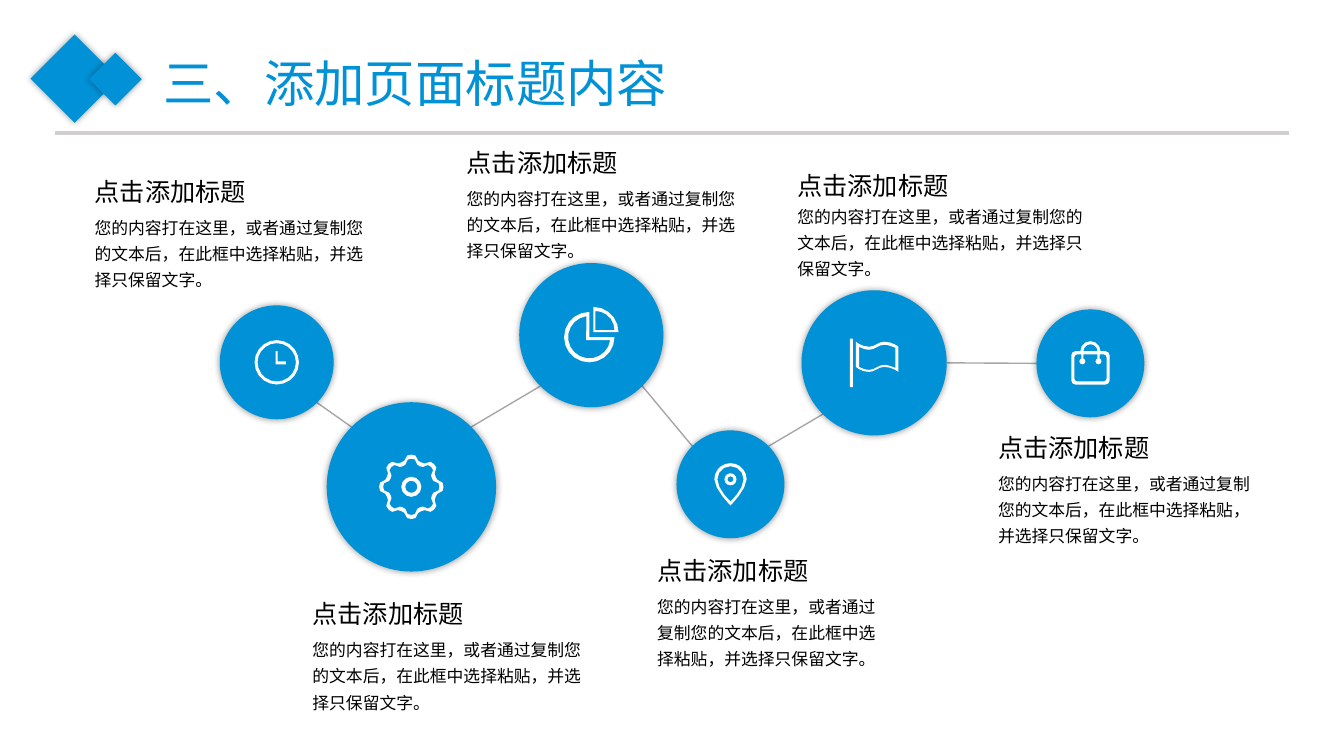
"""Build a slide with six linked icon circles and their captions."""
from dataclasses import dataclass
from math import cos, pi, radians, sin, tanh
from typing import Any

from lxml.etree import SubElement as Sub
from pptx import Presentation as Deck
from pptx.dml.color import RGBColor as Rgb
from pptx.enum.shapes import MSO_CONNECTOR as Link, MSO_SHAPE as Form
from pptx.enum.text import MSO_AUTO_SIZE as Fit
from pptx.oxml.ns import qn
from pptx.util import Inches, Pt

Point = tuple[float, float]
Path = list[Point]

BLUE, WHITE, BLACK = "0091D6", "FFFFFF", "000000"
FACE = "Noto Sans CJK SC"
HEAD = "点击添加标题"
BODY = "您的内容打在这里，或者通过复制您的文本后，在此框中选择粘贴，并选择只保留文字。"
TITLE_FMT = {"name": FACE, "size": Pt(36)}
HEAD_FMT = {"name": FACE, "size": Pt(18)}
BODY_FMT = {"name": FACE, "size": Pt(12)}


@dataclass
class Node:
    x: float
    y: float
    size: float
    icon: list[Path]
    left: float
    top: float
    width: float
    gap: float = 0.35

    def mid(self) -> Point:
        return self.x + self.size / 2, self.y + self.size / 2

    def edge(self, turn: float) -> Point:
        x, y = self.mid()
        t, r = radians(turn), self.size / 2
        return x + r * cos(t), y + r * sin(t)


def arc(x: float, y: float, r: float, start: float = 0, end: float = 360) -> Path:
    pitch = 18 if r > 0.15 else 30 if r > 0.05 else 45
    steps = round(abs(end - start) / pitch)
    turns = [radians(start + (end - start) * i / steps) for i in range(steps + 1)]
    return [(x + r * cos(t), y + r * sin(t)) for t in turns]


def curve(*knots: Point) -> Path:
    out = [knots[0]]
    for i in range(0, len(knots) - 1, 3):
        for k in range(1, 5):
            t = k / 4
            parts = ((1 - t) ** 3, 3 * t * (1 - t) ** 2, 3 * t * t * (1 - t), t ** 3)
            out.append((sum(w * p[0] for w, p in zip(parts, knots[i:i + 4])),
                        sum(w * p[1] for w, p in zip(parts, knots[i:i + 4]))))
    return out


def box(x: float, y: float, right: float, base: float, r: float = 0) -> Path:
    if not r:
        return [(x, y), (right, y), (right, base), (x, base)]
    spots = ((right - r, base - r), (x + r, base - r), (x + r, y + r), (right - r, y + r))
    return [p for i, (a, b) in enumerate(spots)
            for p in arc(a, b, r, 90 * i, 90 * i + 90)]


def cog(r: float) -> Path:
    turns = [2 * pi * i / 48 for i in range(48)]
    rims = [r + 0.03 * tanh(2 * cos(8 * t)) for t in turns]
    return [(d * cos(t), d * sin(t)) for d, t in zip(rims, turns)]


def drop(r: float, tip: float) -> Path:
    y = -0.05
    side = curve((r, y), (r, y + 0.1), (0, tip), (0, tip))
    return arc(0, y, r, 180, 360) + side[1:] + [(-a, b) for a, b in side[-2:0:-1]]


def band(wave: Path, fall: float) -> Path:
    return wave + [(x, y + fall) for x, y in wave[::-1]]


RIM = curve((-0.18, -0.21), (-0.18, -0.21), (-0.13, -0.16), (-0.05, -0.16), (0.01, -0.16),
            (0.04, -0.21), (0.1, -0.21), (0.18, -0.21), (0.24, -0.16), (0.24, -0.16))
CORE = curve((-0.15, -0.16), (-0.13, -0.15), (-0.09, -0.13), (-0.05, -0.13), (0.01, -0.13),
             (0.04, -0.18), (0.1, -0.18), (0.14, -0.18), (0.18, -0.16), (0.21, -0.15))

CLOCK = [arc(0, 0, 0.22), arc(0, 0, 0.19),
         [(-0.01, -0.11), (0.01, -0.11), (0.01, -0.01), (0.09, -0.01), (0.09, 0.02), (-0.01, 0.02)]]
GEAR = [cog(0.29), cog(0.25), arc(0, 0, 0.1), arc(0, 0, 0.06)]
PIE = [arc(0.02, -0.03, 0.25, -90, 0) + [(0.02, -0.03)],
       arc(0.04, -0.05, 0.19, -90, 0) + [(0.04, -0.05)],
       arc(-0.02, 0.02, 0.25, 0, 270) + [(-0.02, 0.02)],
       arc(-0.02, 0.02, 0.21, 8, 262) + [(-0.05, 0.05)]]
PIN = [drop(0.16, 0.21), drop(0.13, 0.17), arc(0, -0.05, 0.06), arc(0, -0.05, 0.03)]
FLAG = [box(-0.24, -0.24, -0.21, 0.24), band(RIM, 0.25), band(CORE, 0.2)]
BAG = [box(-0.19, -0.12, 0.19, 0.21, 0.04), box(-0.16, -0.09, 0.16, 0.18, 0.03),
       arc(0, -0.12, 0.1, 180, 360) + arc(0, -0.12, 0.07, 360, 180),
       *[box(x - 0.01, -0.09, x + 0.01, -0.05) for x in (-0.08, 0.08)],
       *[arc(x, -0.02, 0.03) for x in (-0.08, 0.08)]]

NODES = {
    "clock": Node(2.18, 3.03, 1.13, CLOCK, 0.84, 1.7, 2.94),
    "gear": Node(3.24, 3.99, 1.68, GEAR, 3, 5.89, 3.02),
    "pie": Node(5.15, 2.61, 1.43, PIE, 4.53, 1.41, 2.99),
    "pin": Node(6.71, 4.27, 1.07, PIN, 6.42, 5.46, 2.4),
    "flag": Node(7.95, 2.88, 1.44, FLAG, 7.81, 1.64, 3.09, 0.3),
    "bag": Node(10.28, 3.07, 1.07, BAG, 9.8, 4.24, 2.85),
}
LINKS = [("bag", 180, "flag", 0), ("pie", 135, "gear", 315), ("flag", 135, "pin", 315),
         ("pie", 45, "pin", 225), ("clock", 45, "gear", 225)]


def tint(code: str) -> Rgb:
    return Rgb.from_string(code)


def paint(shape: Any, code: str) -> None:
    shape.shadow.inherit = False
    shape.fill.solid()
    shape.fill.fore_color.rgb = tint(code)
    shape.line.fill.background()


def glow(shape: Any) -> None:
    holder = shape._element.spPr.find(qn("a:effectLst"))
    shade = Sub(holder, qn("a:outerShdw"), blurRad=str(Pt(5)), dist="0", dir="0",
                algn="ctr", rotWithShape="0")
    ink = Sub(shade, qn("a:srgbClr"), val=BLACK)
    Sub(ink, qn("a:alpha"), val="40000")


def solid(slide: Any, form: Any, x: float, y: float, size: float, turn: float = 0) -> None:
    shape = slide.shapes.add_shape(form, Inches(x), Inches(y), Inches(size), Inches(size))
    shape.rotation = turn
    paint(shape, BLUE)
    glow(shape)


def rule(slide: Any, start: Point, end: Point, code: str, width: float) -> None:
    line = slide.shapes.add_connector(Link.STRAIGHT, *map(Inches, start + end))
    line.line.color.rgb = tint(code)
    line.line.width = Pt(width)
    Sub(line._element.spPr, qn("a:effectLst"))


def draw(slide: Any, node: Node) -> None:
    x, y = node.mid()
    paths = [[(Inches(x + a), Inches(y + b)) for a, b in path] for path in node.icon]
    pen = slide.shapes.build_freeform(*paths[0][0])
    for i, path in enumerate(paths):
        if i:
            pen.move_to(*path[0])
        pen.add_line_segments(path[1:], close=True)
    paint(pen.convert_to_shape(), WHITE)


def write(slide: Any, text: str, spot: tuple[float, float, float, float], form: dict[str, Any],
          code: str = BLACK, wrap: bool = True, space: float = 1) -> None:
    frame = slide.shapes.add_textbox(*map(Inches, spot)).text_frame
    frame.word_wrap = wrap
    frame.auto_size = Fit.SHAPE_TO_FIT_TEXT
    para = frame.paragraphs[0]
    para.line_spacing = space
    run = para.add_run()
    run.text = text
    run.font.color.rgb = tint(code)
    for key, value in form.items():
        setattr(run.font, key, value)
    Sub(run._r.get_or_add_rPr(), qn("a:ea"), typeface=FACE)


def main() -> None:
    deck = Deck()
    deck.slide_width, deck.slide_height = Inches(13.33), Inches(7.5)
    slide = deck.slides.add_slide(deck.slide_layouts[6])
    rule(slide, (0.55, 1.32), (12.78, 1.32), "D0CECE", 2.25)
    solid(slide, Form.RECTANGLE, 0.43, 0.47, 0.62, 315)
    solid(slide, Form.RECTANGLE, 0.96, 0.6, 0.37, 315)
    write(slide, "三、添加页面标题内容", (1.52, 0.47, 6.21, 0.71), TITLE_FMT, BLUE)
    for start, out, end, into in LINKS:
        rule(slide, NODES[start].edge(out), NODES[end].edge(into), "A6A6A6", 1)
    for node in NODES.values():
        solid(slide, Form.OVAL, node.x, node.y, node.size)
        draw(slide, node)
        write(slide, HEAD, (node.left, node.top, 1.72, 0.4), HEAD_FMT, wrap=False)
        write(slide, BODY, (node.left, node.top + node.gap, node.width, 0.86), BODY_FMT, space=1.3)
    deck.save("out.pptx")


if __name__ == "__main__":
    main()
